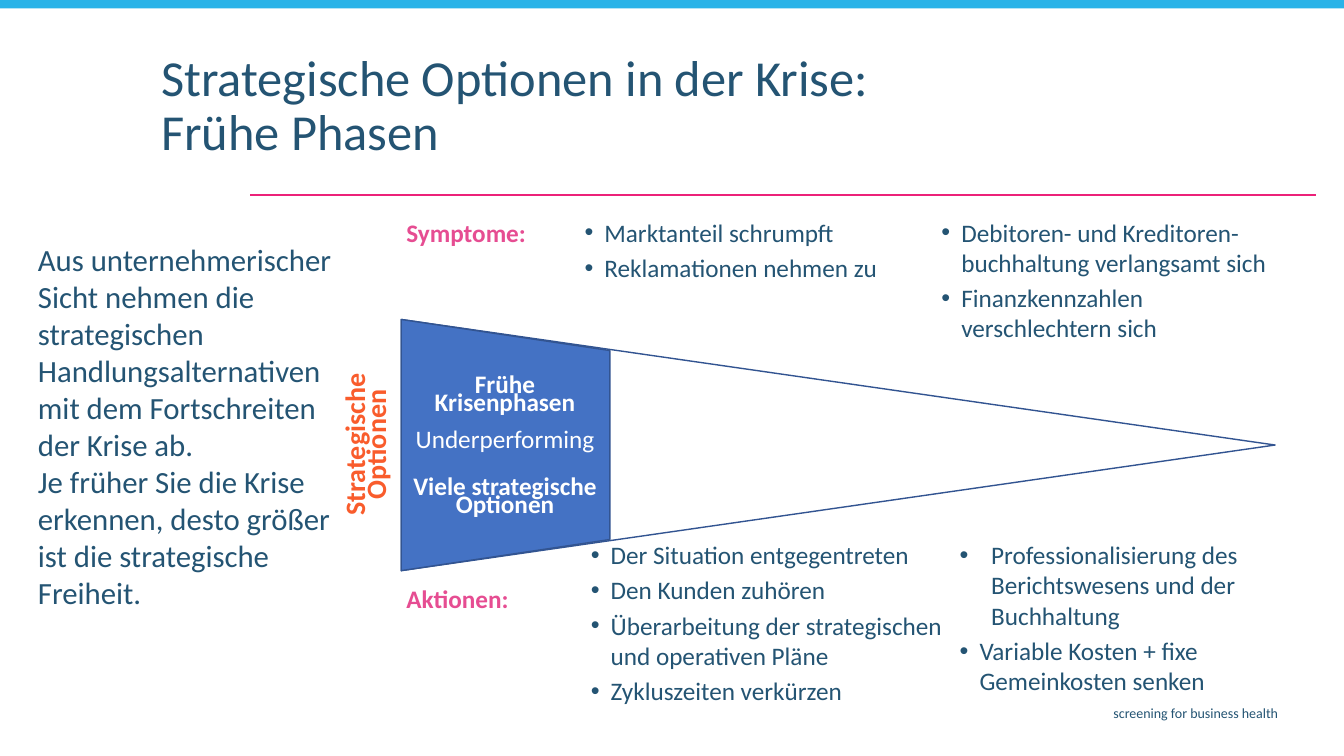
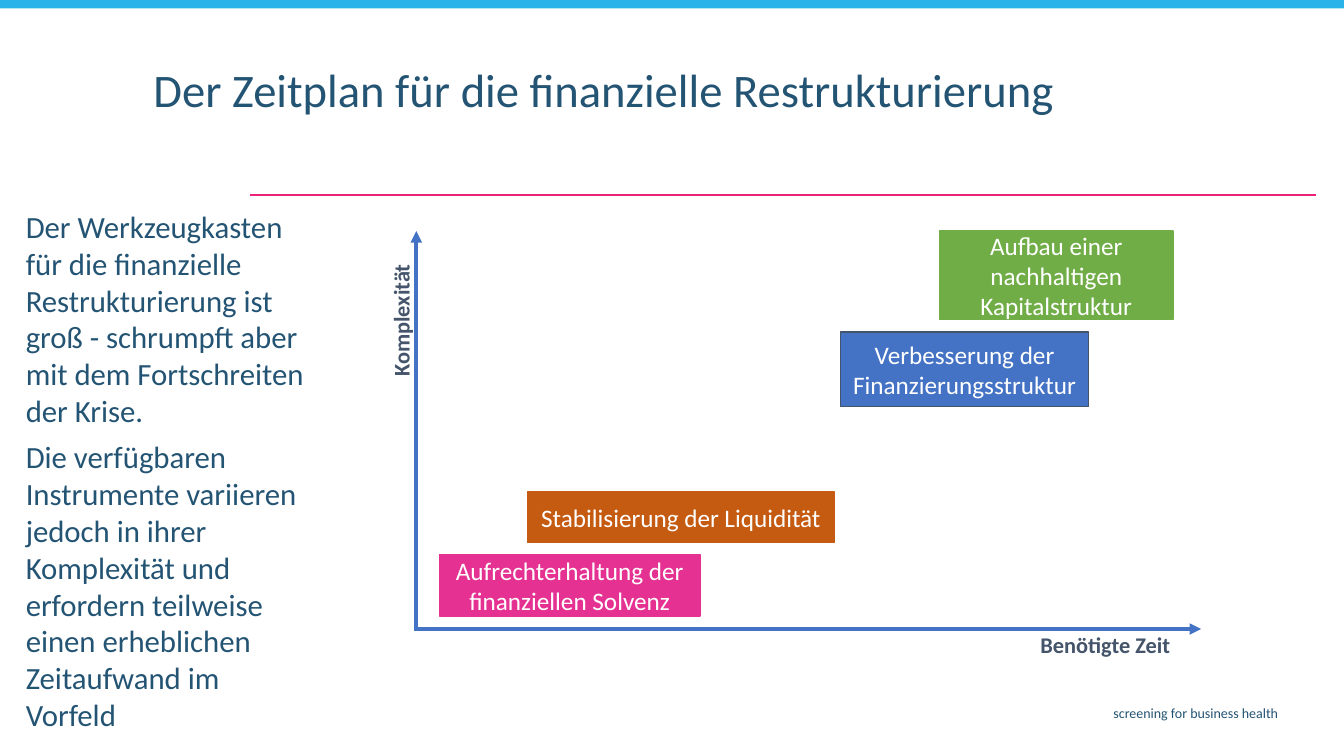
from dataclasses import dataclass

from pptx import Presentation
from pptx.dml.color import RGBColor
from pptx.enum.shapes import MSO_CONNECTOR, MSO_SHAPE
from pptx.enum.text import MSO_ANCHOR, MSO_AUTO_SIZE, PP_ALIGN
from pptx.oxml.ns import qn
from pptx.util import Pt

LEFT, MID, RIGHT = PP_ALIGN.LEFT, PP_ALIGN.CENTER, PP_ALIGN.RIGHT
TOP, CENTER = MSO_ANCHOR.TOP, MSO_ANCHOR.MIDDLE
FIXED = MSO_AUTO_SIZE.NONE
STRAIGHT = MSO_CONNECTOR.STRAIGHT
RECT, CONE, TRAP = MSO_SHAPE.RECTANGLE, MSO_SHAPE.ISOSCELES_TRIANGLE, MSO_SHAPE.TRAPEZOID


@dataclass(frozen=True)
class Theme:
    font: str = "Calibri"
    ink: str = "245473"
    slate: str = "44546A"
    white: str = "FFFFFF"
    sky: str = "29B3E8"
    rose: str = "EC2179"
    pink: str = "E64D92"
    berry: str = "E53292"
    flame: str = "F95C2C"
    rust: str = "C55A11"
    blue: str = "4472C4"
    navy: str = "325491"
    green: str = "70AD47"
    head: float = 36
    slim: float = 33.3
    text: float = 22
    side: float = 20
    list: float = 18
    axis: float = 16
    foot: float = 10


theme = Theme()
WIDE = (7.2, 3.6)
TIGHT = (3, 1.5)


def write(shape, rows, size, tone=theme.ink, bold=False, align=LEFT, anchor=TOP,
          inset=WIDE, gap=0, lead=1.0, dent=0):
    frame = shape.text_frame
    frame.word_wrap = True
    frame.auto_size = FIXED
    frame.vertical_anchor = anchor
    frame.margin_left = frame.margin_right = Pt(inset[0])
    frame.margin_top = frame.margin_bottom = Pt(inset[1])
    for i, row in enumerate(rows):
        para = frame.add_paragraph() if i else frame.paragraphs[0]
        props = para._p.get_or_add_pPr()
        props.set("marL", str(Pt(dent)))
        props.set("indent", str(-Pt(dent)))
        if dent:
            mark = props.makeelement(qn("a:buChar"), {"char": "•"})
        else:
            mark = props.makeelement(qn("a:buNone"), {})
        props.append(mark)
        para.alignment = align
        para.line_spacing = lead
        para.space_before = Pt(gap if i else 0)
        run = para.add_run()
        run.text = row
        run.font.name = theme.font
        run.font.size = Pt(size)
        run.font.bold = bold
        run.font.color.rgb = RGBColor.from_string(tone)
    return frame.paragraphs


def draw(page, kind, spot, fill, edge):
    shape = page.shapes.add_shape(kind, *map(Pt, spot))
    shape.shadow.inherit = False
    shape.fill.solid()
    shape.fill.fore_color.rgb = RGBColor.from_string(fill)
    shape.line.color.rgb = RGBColor.from_string(edge)
    shape.line.width = Pt(1)
    return shape


deck = Presentation()
deck.slide_width, deck.slide_height = Pt(960), Pt(540)
early = deck.slides.add_slide(deck.slide_layouts[4])
plan = deck.slides.add_slide(deck.slide_layouts[1])

band = draw(early, RECT, (0, 0, 960, 6), theme.sky, theme.sky)
band.line.fill.background()
foot = early.shapes.add_textbox(Pt(263), Pt(499.7), Pt(657), Pt(21))
write(foot, ["screening for business health"], theme.foot, align=RIGHT)
shared = [band, foot]

base, stem = 449.3, 297.4
lines = [
    (early, (178.6, 139, 940.3, 139), theme.rose, 1.5, False),
    (plan, (stem, base + 1.4, stem, 165), theme.blue, 2.75, True),
    (plan, (stem, base, 858, base), theme.blue, 2.75, True),
]
for page, ends, tone, width, arrow in lines:
    line = page.shapes.add_connector(STRAIGHT, *map(Pt, ends))
    line.line.color.rgb = RGBColor.from_string(tone)
    line.line.width = Pt(width)
    props = line._element.spPr
    props.append(props.makeelement(qn("a:effectLst"), {}))
    if arrow:
        stroke = line.line._get_or_add_ln()
        stroke.append(stroke.makeelement(qn("a:tailEnd"), {"type": "triangle"}))
    else:
        shared.append(line)

for part in shared:
    deck.slide_master.shapes.element.append(part._element)

titles = [
    (early, "Strategische Optionen in der Krise: Frühe Phasen", theme.head, (108, 34, 554, 90)),
    (plan, "Der Zeitplan für die finanzielle Restrukturierung", theme.slim, (102.4, 44.6, 697, 55)),
]
for page, words, size, spot in titles:
    title = page.shapes.title
    title.left, title.top, title.width, title.height = map(Pt, spot)
    write(title, [words], size, lead=0.9)

lists = [
    (414.5, 153.4, 257, ["Marktanteil schrumpft", "Reklamationen nehmen zu"]),
    (669.5, 153.4, 256, ["Debitoren- und Kreditoren-buchhaltung verlangsamt sich",
                         "Finanzkennzahlen verschlechtern sich"]),
    (419, 383.8, 266, ["Der Situation entgegentreten", "Den Kunden zuhören",
                       "Überarbeitung der strategischen und operativen Pläne",
                       "Zykluszeiten verkürzen"]),
    (682.5, 383.8, 266, ["Professionalisierung des Berichtswesens und der Buchhaltung",
                         "Variable Kosten + fixe Gemeinkosten senken"]),
]
for slot, (left, top, width, rows) in enumerate(lists, 1):
    body = early.placeholders[slot]
    body.left, body.top, body.width, body.height = map(Pt, (left, top, width, 125))
    paras = write(body, rows, theme.list, inset=TIGHT, gap=3.6, dent=14.2)
deep = paras[0]._p.get_or_add_pPr()
deep.set("marL", str(Pt(22.5)))
deep.set("indent", str(-Pt(22.5)))

note = early.shapes.add_textbox(Pt(20), Pt(168.5), Pt(225.5), Pt(294.5))
write(note, [
    "Aus unternehmerischer Sicht nehmen die strategischen Handlungsalternativen "
    "mit dem Fortschreiten der Krise ab.",
    "Je früher Sie die Krise erkennen, desto größer ist die strategische Freiheit.",
], theme.text)

cone = draw(early, CONE, (509, 5.8, 179.4, 624.2), theme.white, theme.navy)
trap = draw(early, TRAP, (271.4, 243.4, 179.4, 149), theme.blue, theme.navy)
trap.adjustments[0] = 0.149
for shape in cone, trap:
    shape.rotation = 90

tags = [
    (early, (286.6, 270, 148.3, 108), ["Frühe Krisenphasen", "Underperforming",
                                       "Viele strategische Optionen"],
     theme.list, theme.white, MID, Pt(13.1), 0),
    (early, (287.3, 162, 148.3, 17), ["Symptome:"], theme.list, theme.pink, LEFT, Pt(13.1), 0),
    (early, (287.3, 423.4, 148.3, 17), ["Aktionen:"], theme.list, theme.pink, LEFT, Pt(13.1), 0),
    (early, (191.5, 300.2, 148.3, 34.6), ["Strategische Optionen"],
     theme.side, theme.flame, MID, Pt(15), 270),
    (plan, (615, 449.3, 224, 22.3), ["Benötigte Zeit"], theme.axis, theme.slate, RIGHT, 1.0, 0),
    (plan, (174.2, 286.6, 224, 22.3), ["Komplexität"], theme.axis, theme.slate, RIGHT, 1.0, 270),
]
for page, spot, rows, size, tone, align, lead, turn in tags:
    tag = page.shapes.add_textbox(*map(Pt, spot))
    tag.rotation = turn
    paras = write(tag, rows, size, tone, True, align, inset=TIGHT, lead=lead)
    if len(rows) > 1:
        paras[1].runs[0].font.bold = False
        paras[1].space_before = Pt(13.1)
        paras[2].space_before = Pt(20.3)

body = plan.placeholders[1]
body.left, body.top, body.width, body.height = map(Pt, (11.2, 144.5, 219.6, 392))
write(body, [
    "Der Werkzeugkasten für die finanzielle Restrukturierung ist groß - schrumpft aber "
    "mit dem Fortschreiten der Krise.",
    "Die verfügbaren Instrumente variieren jedoch in ihrer Komplexität und erfordern "
    "teilweise einen erheblichen Zeitaufwand im Vorfeld",
], theme.text, gap=6)

steps = [
    ("Aufrechterhaltung der finanziellen Solvenz", (314, 396, 186, 44), theme.berry, theme.berry),
    ("Stabilisierung der Liquidität", (376.6, 351.5, 219.6, 36), theme.rust, theme.rust),
    ("Verbesserung der Finanzierungsstruktur", (600.4, 237, 177.2, 53.2), theme.blue, theme.slate),
    ("Aufbau einer nachhaltigen Kapitalstruktur", (671, 165, 167, 63.4), theme.green, theme.green),
]
for words, spot, fill, edge in steps:
    step = draw(plan, RECT, spot, fill, edge)
    write(step, [words], theme.list, theme.white, align=MID, anchor=CENTER)

deck.save("out.pptx")
